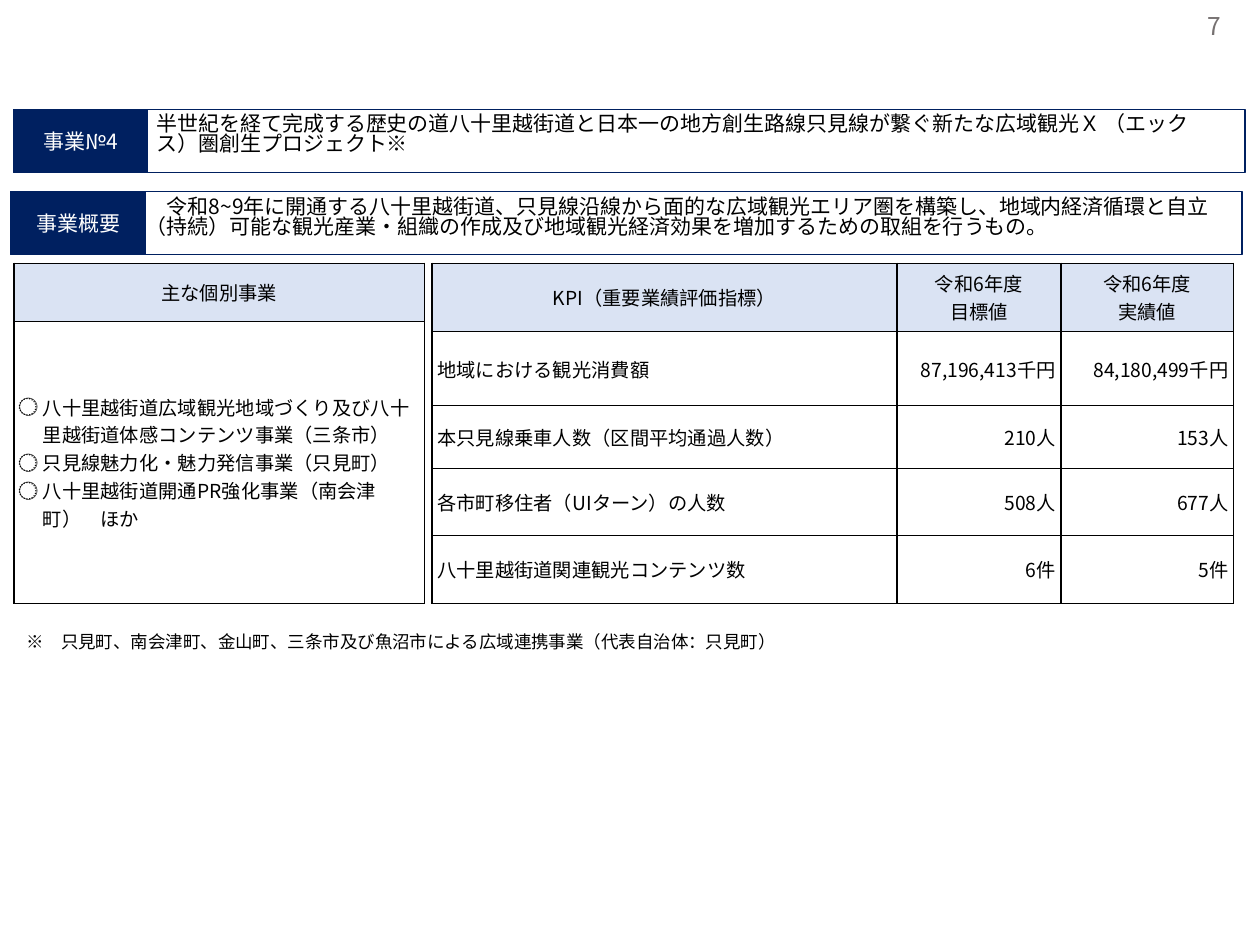
from lxml.etree import SubElement
from pptx import Presentation
from pptx.dml.color import RGBColor
from pptx.enum.shapes import MSO_SHAPE
from pptx.enum.text import MSO_ANCHOR, PP_ALIGN
from pptx.oxml.ns import qn
from pptx.util import Inches, Pt

FONT = "Noto Sans CJK JP"
NAVY, WHITE, BLACK, GRAY, PALE = "002060", "FFFFFF", "000000", "767171", "DAE3F3"
LEFT, CENTER, RIGHT = PP_ALIGN.LEFT, PP_ALIGN.CENTER, PP_ALIGN.RIGHT

PAGE_NUMBER = "7"
PROJECT_LABEL = "事業№4"
PROJECT_NAME = ("半世紀を経て完成する歴史の道八十里越街道と日本一の地方創生路線只見線が繋ぐ"
                "新たな広域観光Ｘ （エックス）圏創生プロジェクト※")
OVERVIEW_LABEL = "事業概要"
OVERVIEW = ("　令和8~9年に開通する八十里越街道、只見線沿線から面的な広域観光エリア圏を構築し、"
            "地域内経済循環と自立（持続）可能な観光産業・組織の作成及び"
            "地域観光経済効果を増加するための取組を行うもの。")
PROJECTS = [
    ["主な個別事業"],
    ["八十里越街道広域観光地域づくり及び八十里越街道体感コンテンツ事業（三条市）\n"
     "只見線魅力化・魅力発信事業（只見町）\n"
     "八十里越街道開通PR強化事業（南会津町）　ほか"],
]
KPIS = [
    ["KPI（重要業績評価指標）", "令和6年度\n目標値", "令和6年度\n実績値"],
    ["地域における観光消費額", "87,196,413千円", "84,180,499千円"],
    ["本只見線乗車人数（区間平均通過人数）", "210人", "153人"],
    ["各市町移住者（UIターン）の人数", "508人", "677人"],
    ["八十里越街道関連観光コンテンツ数", "6件", "5件"],
]
FOOTNOTE = "※　只見町、南会津町、金山町、三条市及び魚沼市による広域連携事業（代表自治体：只見町）"


def rgb(value):
    """Turn a hex string into a colour."""
    return RGBColor.from_string(value)


def write(frame, text, size, color=BLACK, align=LEFT, spacing=None, before=0):
    """Fill a text frame and format all its paragraphs."""
    frame.text = text
    frame.word_wrap = True
    for paragraph in frame.paragraphs:
        paragraph.alignment = align
        paragraph.space_before = Pt(before)
        if spacing:
            paragraph.line_spacing = spacing
        for run in paragraph.runs:
            run.font.size = Pt(size)
            run.font.name = FONT
            run.font.color.rgb = rgb(color)
            SubElement(run.font._element, qn("a:ea"), typeface=FONT)


def add_text(slide, box, text, size, **style):
    """Add a text box."""
    frame = slide.shapes.add_textbox(*map(Inches, box)).text_frame
    write(frame, text, size, **style)
    return frame


def add_box(slide, box, fill=None):
    """Add a navy-edged rectangle, hollow unless a fill is given."""
    rectangle = slide.shapes.add_shape(MSO_SHAPE.RECTANGLE, *map(Inches, box))
    rectangle.shadow.inherit = False
    rectangle.line.color.rgb = rgb(NAVY)
    rectangle.line.width = Pt(1)
    if fill:
        rectangle.fill.solid()
        rectangle.fill.fore_color.rgb = rgb(fill)
    else:
        rectangle.fill.background()
    return rectangle


def add_band(slide, left, top, label):
    """Add a framed band with a navy label at its left end."""
    add_box(slide, (left, top, 9.77, 0.5))
    label_frame = add_box(slide, (left, top, 1.06, 0.5), NAVY).text_frame
    write(label_frame, label, 12, WHITE, CENTER, before=3)
    label_frame.vertical_anchor = MSO_ANCHOR.MIDDLE


def add_borders(cell):
    """Draw a thin black line on every side of a cell."""
    properties = cell._tc.get_or_add_tcPr()
    for index, side in enumerate(("lnL", "lnR", "lnT", "lnB")):
        line = properties.makeelement(qn(f"a:{side}"), {"w": str(Pt(1))})
        fill = SubElement(line, qn("a:solidFill"))
        SubElement(fill, qn("a:srgbClr"), val=BLACK)
        properties.insert(index, line)


def add_bullets(frame):
    """Give every paragraph a hanging circle bullet."""
    for paragraph in frame.paragraphs:
        properties = paragraph._p.get_or_add_pPr()
        properties.set("marL", str(Inches(0.19)))
        properties.set("indent", str(-Inches(0.19)))
        SubElement(properties, qn("a:buFont"), typeface=FONT)
        SubElement(properties, qn("a:buChar"), char="⃝")


def add_grid(slide, left, rows, widths, heights):
    """Add a table with a pale header row and right-aligned values."""
    table = slide.shapes.add_table(len(rows), len(widths), Inches(left), Inches(2.09),
                                   Inches(sum(widths)), Inches(sum(heights))).table
    for column, width in zip(table.columns, widths):
        column.width = Inches(width)
    for row_index, (row, height) in enumerate(zip(rows, heights)):
        table.rows[row_index].height = Inches(height)
        for column_index, text in enumerate(row):
            cell = table.cell(row_index, column_index)
            header = row_index == 0
            align = CENTER if header else RIGHT if column_index else LEFT
            write(cell.text_frame, text, 11, align=align)
            cell.vertical_anchor = MSO_ANCHOR.MIDDLE
            cell.margin_left = cell.margin_right = Inches(0.1 if header else 0.04)
            cell.margin_top = cell.margin_bottom = Inches(0.04)
            cell.fill.solid()
            cell.fill.fore_color.rgb = rgb(PALE if header else WHITE)
            add_borders(cell)
    return table


def main():
    """Build the slide and save it."""
    deck = Presentation()
    deck.slide_width, deck.slide_height = Inches(10), Inches(7.5)
    slide = deck.slides.add_slide(deck.slide_layouts[5])

    title = slide.shapes.title
    title.left, title.top, title.width, title.height = map(Inches, (1.14, 0.86, 8.44, 0.81))
    write(title.text_frame, PROJECT_NAME, 12, spacing=0.82)
    title.text_frame.vertical_anchor = MSO_ANCHOR.TOP

    add_text(slide, (9.41, 0.04, 0.46, 0.34), PAGE_NUMBER, 14, color=GRAY, align=CENTER)
    add_band(slide, 0.11, 0.87, PROJECT_LABEL)
    add_band(slide, 0.09, 1.52, OVERVIEW_LABEL)
    add_text(slide, (1.06, 1.52, 8.73, 0.5), OVERVIEW, 12, spacing=0.82)

    projects = add_grid(slide, 0.11, PROJECTS, [3.26], [0.46, 2.24])
    add_bullets(projects.cell(1, 0).text_frame)
    add_grid(slide, 3.43, KPIS, [3.69, 1.3, 1.37], [0.54, 0.59, 0.5, 0.53, 0.54])

    footnote = add_text(slide, (0.11, 4.96, 8.31, 0.26), FOOTNOTE, 10)
    footnote.vertical_anchor = MSO_ANCHOR.MIDDLE


    deck.save("out.pptx")


if __name__ == "__main__":
    main()
